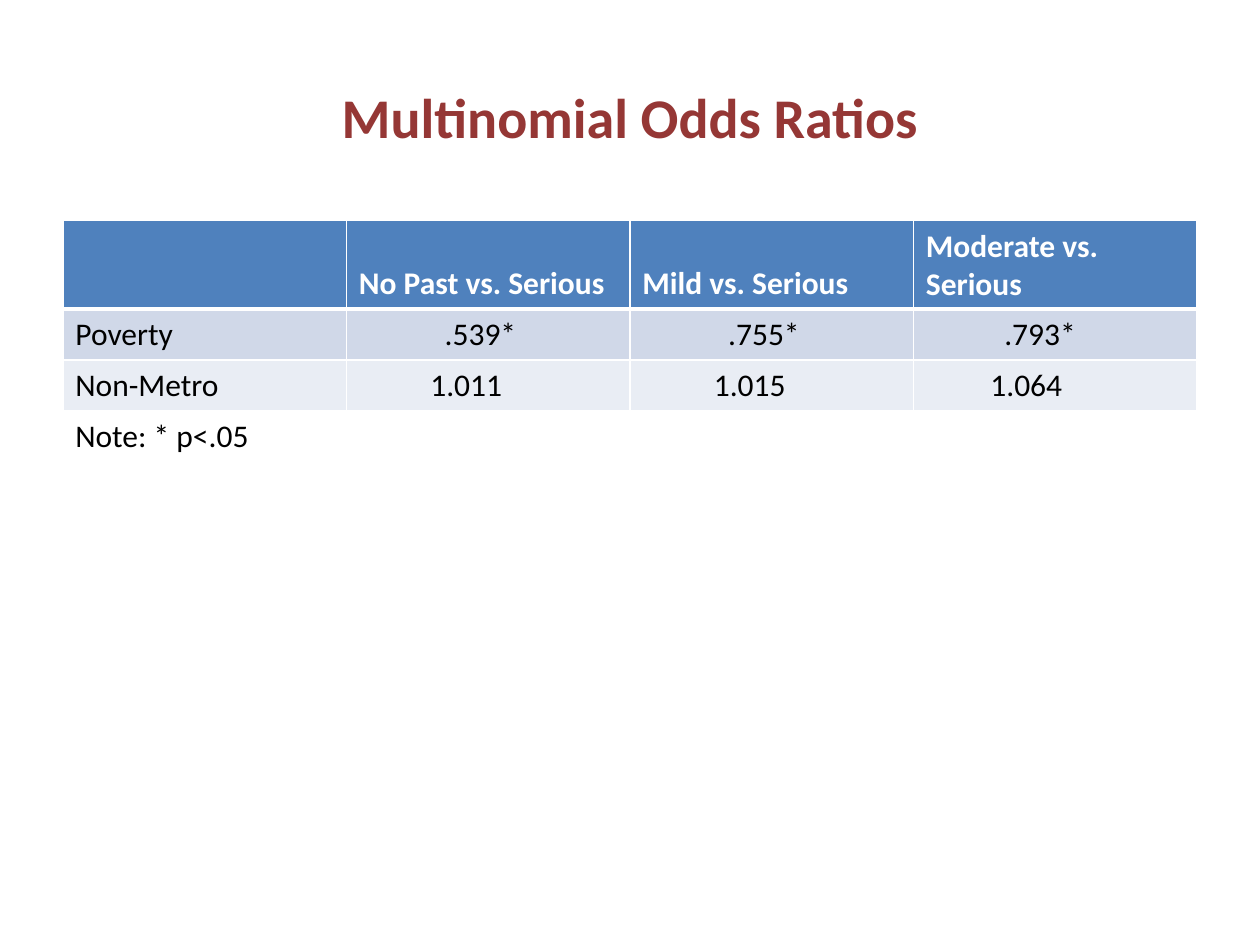
"""Build a slide with a table of multinomial odds ratios."""
from dataclasses import dataclass

from lxml import etree
from pptx import Presentation
from pptx.dml.color import RGBColor
from pptx.enum.text import MSO_ANCHOR, MSO_AUTO_SIZE, PP_ALIGN
from pptx.oxml.ns import qn
from pptx.util import Cm, Pt

MIDDLE, BOTTOM = MSO_ANCHOR.MIDDLE, MSO_ANCHOR.BOTTOM
CENTER = PP_ALIGN.CENTER
FIT_SHAPE = MSO_AUTO_SIZE.SHAPE_TO_FIT_TEXT
TITLE_ONLY = 5
FONT = "Calibri"
WHITE, BLACK, RED = "FFFFFF", "000000", "953735"
LEFT, WIDTH = 1.27, 22.86
TABLE_TOP = 4.45
LABEL_INDENT = 0.25


@dataclass
class TableRow:
    texts: list[str]
    indents: list[float]
    height: float
    fill: str
    color: str
    bold: bool
    top_line: float
    bottom_line: float


HEADINGS = ["", "No Past vs. Serious", "Mild vs. Serious", "Moderate vs. Serious"]
ROWS = [
    TableRow(HEADINGS, [LABEL_INDENT] * 4, 1.75, "4F81BD", WHITE, True, 1, 3),
    TableRow(["Poverty", ".539*", ".755*", ".793*"],
             [LABEL_INDENT, 1.98, 1.98, 1.83], 1.03, "D0D8E8", BLACK, False, 3, 1),
    TableRow(["Non-Metro", "1.011", "1.015", "1.064"],
             [LABEL_INDENT, 1.69, 1.69, 1.55], 1.03, "E9EDF4", BLACK, False, 1, 1),
]


def rgb(color: str) -> RGBColor:
    return RGBColor.from_string(color)


def add_run(paragraph, text: str, size: float, color: str, bold: bool = False) -> None:
    run = paragraph.add_run()
    run.text = text
    run.font.name = FONT
    run.font.size = Pt(size)
    run.font.bold = bold
    run.font.color.rgb = rgb(color)


def add_border(cell, side: str, width: float) -> None:
    properties = cell._tc.get_or_add_tcPr()
    line = etree.SubElement(properties, qn(f"a:ln{side}"), w=str(Pt(width)))
    fill = etree.SubElement(line, qn("a:solidFill"))
    etree.SubElement(fill, qn("a:srgbClr"), val=WHITE)


def fill_cell(cell, text: str, indent: float, row: TableRow) -> None:
    borders = {"L": 1, "R": 1, "T": row.top_line, "B": row.bottom_line}
    for side, width in borders.items():
        add_border(cell, side, width)
    cell.fill.solid()
    cell.fill.fore_color.rgb = rgb(row.fill)
    cell.margin_left = Cm(indent)
    cell.vertical_anchor = BOTTOM
    if text:
        add_run(cell.text_frame.paragraphs[0], text, 18, row.color, row.bold)


def add_ratio_table(slide, rows: list[TableRow]) -> None:
    height = sum(row.height for row in rows)
    table = slide.shapes.add_table(len(rows), len(HEADINGS), Cm(LEFT), Cm(TABLE_TOP),
                                   Cm(WIDTH), Cm(height)).table
    for table_row, row in zip(table.rows, rows):
        table_row.height = Cm(row.height)
        for cell, text, indent in zip(table_row.cells, row.texts, row.indents):
            fill_cell(cell, text, indent, row)


def add_note(slide, text: str) -> None:
    note = slide.shapes.add_textbox(Cm(LEFT), Cm(8.26), Cm(4.04), Cm(1.03))
    note.text_frame.word_wrap = False
    note.text_frame.auto_size = FIT_SHAPE
    add_run(note.text_frame.paragraphs[0], text, 18, BLACK)


def set_title(slide, text: str) -> None:
    title = slide.shapes.title
    title.left, title.top = Cm(LEFT), Cm(0.76)
    title.width, title.height = Cm(WIDTH), Cm(3.18)
    title.text_frame.vertical_anchor = MIDDLE
    paragraph = title.text_frame.paragraphs[0]
    paragraph.alignment = CENTER
    add_run(paragraph, text, 32, RED, True)


def main() -> None:
    presentation = Presentation()
    presentation.slide_width, presentation.slide_height = Cm(25.4), Cm(19.05)
    slide = presentation.slides.add_slide(presentation.slide_layouts[TITLE_ONLY])
    add_note(slide, "Note: * p<.05")
    add_ratio_table(slide, ROWS)
    set_title(slide, "Multinomial Odds Ratios")
    presentation.save("out.pptx")


if __name__ == "__main__":
    main()
